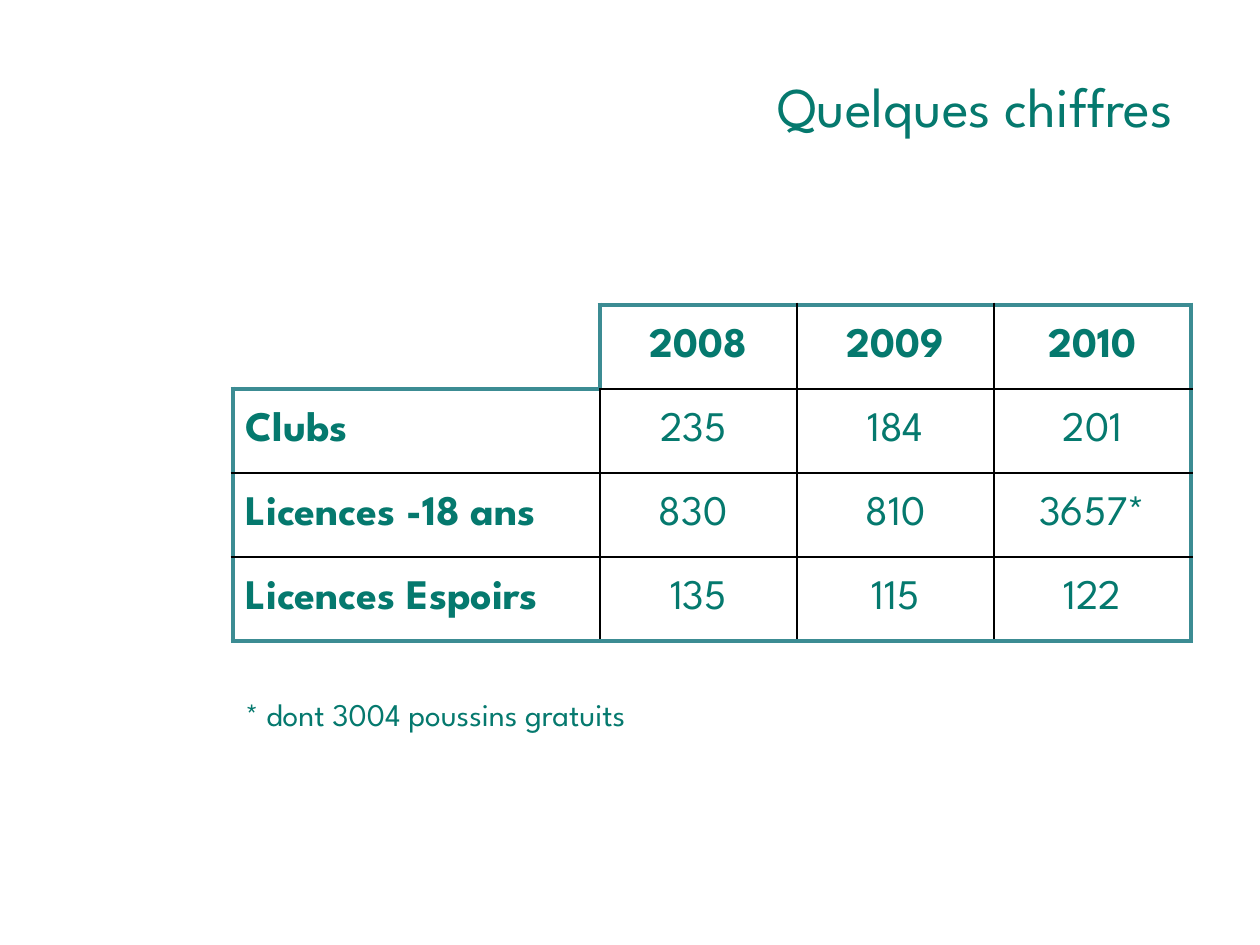
import dataclasses

import lxml.etree
import pptx
import pptx.dml.color
import pptx.enum.text
import pptx.oxml.ns
import pptx.util

EMU_PER_PX = 914400 / 126
ALIGN = pptx.enum.text.PP_ALIGN
ANCHOR = pptx.enum.text.MSO_ANCHOR

FIGURES = [
    ["", "2008", "2009", "2010"],
    ["Clubs", "235 ", "184", "201"],
    ["Licences -18 ans", "830 ", "810", "3657*"],
    ["Licences Espoirs", "135", "115", "122"],
]
COLUMN_WIDTHS = [367, 197, 197, 197]
ROW_HEIGHT = 84
NEIGHBOURS = {"lnL": (0, -1), "lnR": (0, 1), "lnT": (-1, 0), "lnB": (1, 0)}


@dataclasses.dataclass(frozen=True)
class Theme:
    font: str = "League Spartan"
    text: str = "05796E"
    frame: str = "3C8C93"
    grid: str = "000000"
    title_size: int = 32
    figure_size: int = 24
    note_size: int = 18
    frame_width: int = 3
    grid_width: int = 1


THEME = Theme()


def px(length):
    return pptx.util.Emu(round(length * EMU_PER_PX))


def write(frame, text, size, align=ALIGN.LEFT, bold=False):
    paragraph = frame.paragraphs[0]
    paragraph.alignment = align
    run = paragraph.add_run()
    run.text = text
    font_format = {"name": THEME.font, "size": pptx.util.Pt(size), "bold": bold}
    for attribute, value in font_format.items():
        setattr(run.font, attribute, value)
    run.font.color.rgb = pptx.dml.color.RGBColor.from_string(THEME.text)


def add_label(slide, box, text, size, align, **frame_format):
    frame = slide.shapes.add_textbox(*map(px, box)).text_frame
    for attribute, value in frame_format.items():
        setattr(frame, attribute, value)
    write(frame, text, size, align)


def is_inside(row, column):
    """Tell whether a cell lies within the frame, which leaves out the corner."""
    on_grid = 0 <= row < len(FIGURES) and 0 <= column < len(COLUMN_WIDTHS)
    return on_grid and (row, column) != (0, 0)


def border_style(row, column, step):
    """Give colour and width of one cell edge, or None where nothing is drawn."""
    here = is_inside(row, column)
    beyond = is_inside(row + step[0], column + step[1])
    if here != beyond:
        return THEME.frame, THEME.frame_width
    return (THEME.grid, THEME.grid_width) if here else None


def add_borders(cell, row, column):
    qn = pptx.oxml.ns.qn
    properties = cell._tc.get_or_add_tcPr()
    for index, (side, step) in enumerate(NEIGHBOURS.items()):
        line = lxml.etree.Element(qn(f"a:{side}"))
        style = border_style(row, column, step)
        if style:
            color, width = style
            line.set("w", str(pptx.util.Pt(width)))
            fill = lxml.etree.SubElement(line, qn("a:solidFill"))
            lxml.etree.SubElement(fill, qn("a:srgbClr"), val=color)
        else:
            lxml.etree.SubElement(line, qn("a:noFill"))
        properties.insert(index, line)


def add_figures(slide, left, top):
    size = (sum(COLUMN_WIDTHS), ROW_HEIGHT * len(FIGURES))
    table = slide.shapes.add_table(
        len(FIGURES), len(COLUMN_WIDTHS), px(left), px(top), *map(px, size)
    ).table
    for option in ("first_row", "horz_banding"):
        setattr(table, option, False)
    for column, width in zip(table.columns, COLUMN_WIDTHS):
        column.width = px(width)
    for r, values in enumerate(FIGURES):
        table.rows[r].height = px(ROW_HEIGHT)
        for c, value in enumerate(values):
            cell = table.cell(r, c)
            cell.fill.background()
            cell.vertical_anchor = ANCHOR.MIDDLE
            add_borders(cell, r, c)
            if value:
                align = ALIGN.CENTER if c else ALIGN.LEFT
                is_heading = r == 0 or c == 0
                write(cell.text_frame, value, THEME.figure_size, align, is_heading)


def main():
    deck = pptx.Presentation()
    deck.slide_width, deck.slide_height = px(1260), px(945)
    slide = deck.slides.add_slide(deck.slide_layouts[6])
    add_label(slide, (0, 66, 1186, 79), "Quelques chiffres", THEME.title_size,
              ALIGN.RIGHT, word_wrap=True, vertical_anchor=ANCHOR.MIDDLE)
    add_figures(slide, 233, 305)
    add_label(slide, (233, 689, 455, 50), "* dont 3004 poussins gratuits",
              THEME.note_size, ALIGN.LEFT, word_wrap=False,
              auto_size=pptx.enum.text.MSO_AUTO_SIZE.SHAPE_TO_FIT_TEXT)
    deck.save("out.pptx")


if __name__ == "__main__":
    main()
